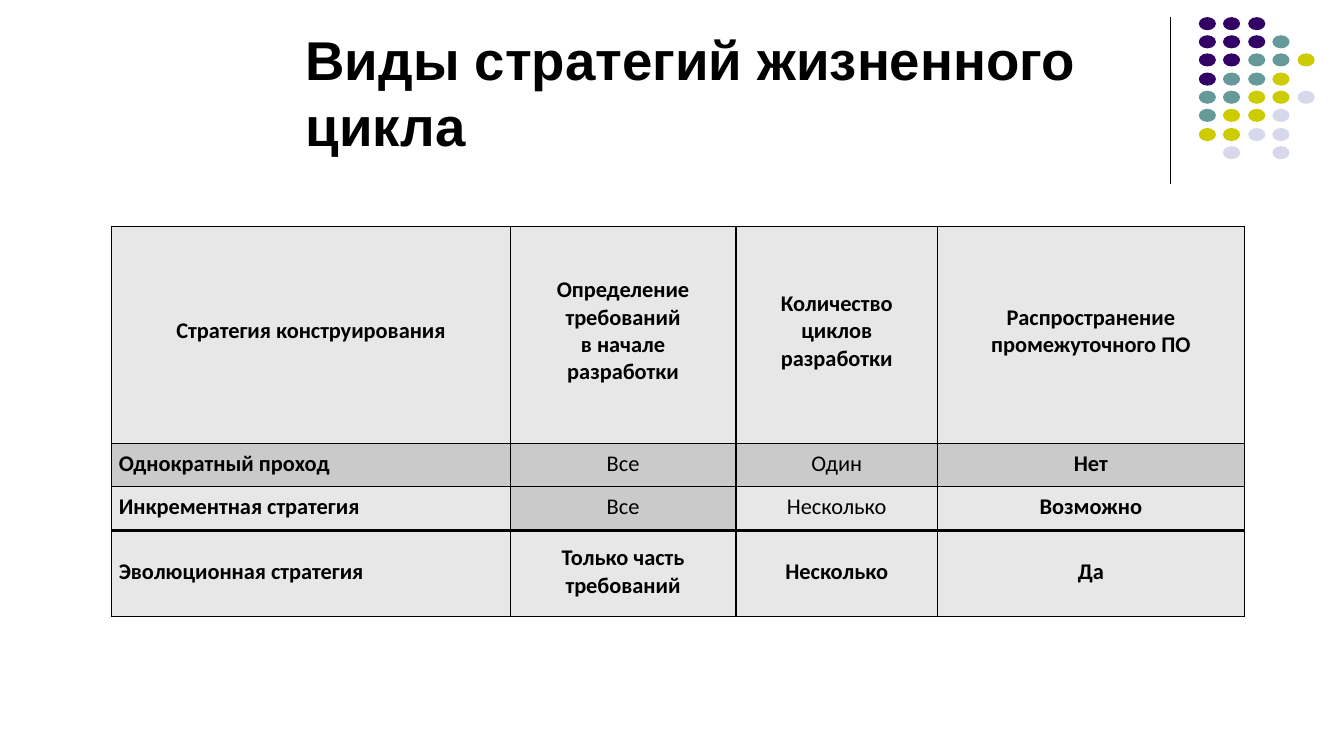
from lxml import etree
from pptx import Presentation
from pptx import util as u
from pptx.dml.color import RGBColor
from pptx.enum import shapes, text
from pptx.oxml import ns

PX = 9144
BLACK = RGBColor(0x00, 0x00, 0x00)
LIGHT = RGBColor(0xE7, 0xE7, 0xE7)
GREY = RGBColor(0xCA, 0xCA, 0xCA)
PURPLE = RGBColor(0x33, 0x00, 0x66)
TEAL = RGBColor(0x66, 0x99, 0x99)
OLIVE = RGBColor(0xCC, 0xCC, 0x00)
LAVENDER = RGBColor(0xD8, 0xD8, 0xEC)

DOT_COLORS = {"P": PURPLE, "T": TEAL, "O": OLIVE, "L": LAVENDER}
DOT_ROWS = ["PPP", "PPPT", "PPTTO", "PTTO", "TTOOL", "TOOL", "OOLL", ".L.L"]

COLUMNS = [395, 224, 200, 304]
HEADER_INSETS = [20, 44, 35, 50]
ROWS = [215, 43, 43, 86]
CELLS = [
    ["Стратегия конструирования", "Определение требований\nв начале разработки",
     "Количество циклов\nразработки", "Распространение промежуточного ПО"],
    ["Однократный проход", "Все", "Один", "Нет"],
    ["Инкрементная стратегия", "Все", "Несколько", "Возможно"],
    ["Эволюционная стратегия", "Только часть\nтребований", "Несколько", "Да"],
]
GREY_CELLS = {(1, 0), (1, 1), (1, 2), (1, 3), (2, 1)}


def px(value):
    return u.Emu(value * PX)


def write(frame, content, font="Calibri", size=16, bold=False, color=BLACK,
          align=text.PP_ALIGN.CENTER):
    frame.word_wrap = True
    frame.text = content
    for paragraph in frame.paragraphs:
        paragraph.alignment = align
        for run in paragraph.runs:
            run.font.name = font
            run.font.size = u.Pt(size)
            run.font.bold = bold
            run.font.color.rgb = color


class SlideBuilder:
    def __init__(self, presentation):
        self.slide = presentation.slides.add_slide(presentation.slide_layouts[5])
        self.shapes = self.slide.shapes

    def title(self, content, left, top, width, height, indent):
        shape = self.shapes.title
        shape.left, shape.top = px(left), px(top)
        shape.width, shape.height = px(width), px(height)
        frame = shape.text_frame
        frame.auto_size = text.MSO_AUTO_SIZE.NONE
        frame.vertical_anchor = text.MSO_ANCHOR.BOTTOM
        frame.margin_left = px(indent)
        frame.margin_top = frame.margin_right = frame.margin_bottom = 0
        write(frame, content, font="Arial", size=39, bold=True,
              align=text.PP_ALIGN.LEFT)

    def line(self, x1, y1, x2, y2, weight=0.75):
        connector = self.shapes.add_connector(
            shapes.MSO_CONNECTOR.STRAIGHT, px(x1), px(y1), px(x2), px(y2))
        connector.line.color.rgb = BLACK
        connector.line.width = u.Pt(weight)
        etree.SubElement(connector.element.spPr, ns.qn("a:effectLst"))

    def dot(self, left, top, color):
        shape = self.shapes.add_shape(
            shapes.MSO_SHAPE.OVAL, px(left), px(top), px(17), px(13))
        shape.shadow.inherit = False
        shape.fill.solid()
        shape.fill.fore_color.rgb = color
        shape.line.fill.background()

    def dots(self, left, top):
        for row, letters in enumerate(DOT_ROWS):
            for column, letter in enumerate(letters):
                if letter in DOT_COLORS:
                    self.dot(left + column * 49 // 2, top + row * 55 // 3,
                             DOT_COLORS[letter])

    def border(self, cell, side, weight):
        properties = cell._tc.get_or_add_tcPr()
        line = etree.SubElement(properties, ns.qn("a:ln" + side),
                                w=str(int(u.Pt(weight))))
        fill = etree.SubElement(line, ns.qn("a:solidFill"))
        etree.SubElement(fill, ns.qn("a:srgbClr"), val=str(BLACK))

    def cell(self, cell, row, column):
        label = row > 0 and column == 0
        inset = HEADER_INSETS[column] if row == 0 else 7
        cell.margin_left = cell.margin_right = px(inset)
        cell.margin_top = 0
        cell.margin_bottom = px(8 if row == 0 else 3)
        cell.vertical_anchor = text.MSO_ANCHOR.MIDDLE
        write(cell.text_frame, CELLS[row][column],
              bold=row in (0, 3) or column in (0, 3),
              align=text.PP_ALIGN.LEFT if label else text.PP_ALIGN.CENTER)
        weights = {"L": 1, "R": 1, "T": 2.25 if row == 3 else 1,
                   "B": 2.25 if row == 2 else 1}
        for side, weight in weights.items():
            self.border(cell, side, weight)
        cell.fill.solid()
        cell.fill.fore_color.rgb = GREY if (row, column) in GREY_CELLS else LIGHT

    def table(self, left, top):
        table = self.shapes.add_table(
            len(ROWS), len(COLUMNS), px(left), px(top),
            px(sum(COLUMNS)), px(sum(ROWS))).table
        for column, width in enumerate(COLUMNS):
            table.columns[column].width = px(width)
        for row, height in enumerate(ROWS):
            table.rows[row].height = px(height)
            for column in range(len(COLUMNS)):
                self.cell(table.cell(row, column), row, column)


def main():
    presentation = Presentation()
    presentation.slide_width, presentation.slide_height = px(1333), px(750)
    builder = SlideBuilder(presentation)
    builder.line(1161, 17, 1161, 183)
    builder.dots(1189, 17)
    builder.title("Виды стратегий жизненного цикла", 67, 13, 1100, 143, indent=236)
    builder.table(111, 225)
    presentation.save("out.pptx")


if __name__ == "__main__":
    main()
